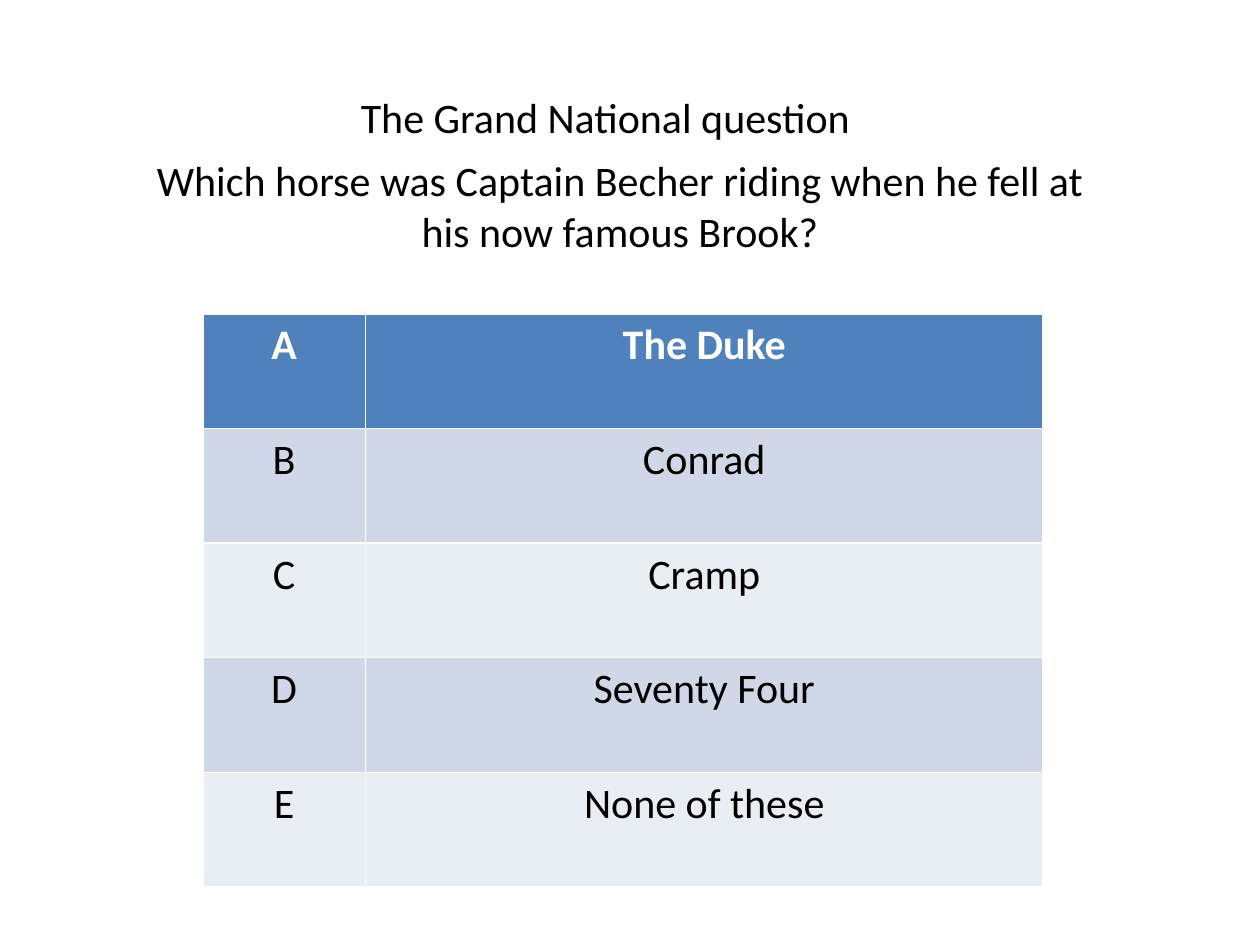
from pptx import Presentation
from pptx import util as u
from pptx.dml.color import RGBColor
from pptx.enum import text

COLORS = {
    "header": "4F81BD",
    "band_dark": "D0D8E8",
    "band_light": "E9EDF4",
    "white": "FFFFFF",
    "black": "000000",
}
FONT = "Calibri"
FONT_SIZE = 24
COLUMN_WIDTHS = (1.29, 5.38)
ROW_HEIGHT = 0.91

TITLE = "The Grand National question"
QUESTION = "Which horse was Captain Becher riding when he fell at his now famous Brook?"
ANSWERS = ("The Duke", "Conrad", "Cramp", "Seventy Four", "None of these")


def color(name):
    return RGBColor.from_string(COLORS[name])


def write(frame, words, color_name="black", bold=False):
    """Put one centred paragraph into a text frame."""
    frame.word_wrap = True
    paragraph = frame.paragraphs[0]
    paragraph.text = words
    paragraph.alignment = text.PP_ALIGN.CENTER
    font = paragraph.font
    font.name, font.size, font.bold = FONT, u.Pt(FONT_SIZE), bold
    font.color.rgb = color(color_name)


def add_title(slide, words, left, top, width, height):
    title = slide.shapes.title
    title.left, title.top = u.Inches(left), u.Inches(top)
    title.width, title.height = u.Inches(width), u.Inches(height)
    title.text_frame.vertical_anchor = text.MSO_ANCHOR.TOP
    title.text_frame.auto_size = text.MSO_AUTO_SIZE.NONE
    write(title.text_frame, words)


def add_question(slide, words, left, top, width, height):
    box = slide.shapes.add_textbox(*map(u.Inches, (left, top, width, height)))
    write(box.text_frame, words)


def add_answer_table(slide, answers, left, top):
    """One row per answer, lettered from A; the table style draws the white rules."""
    size = (sum(COLUMN_WIDTHS), ROW_HEIGHT * len(answers))
    table = slide.shapes.add_table(
        len(answers), len(COLUMN_WIDTHS), *map(u.Inches, (left, top, *size))
    ).table
    for column, width in zip(table.columns, COLUMN_WIDTHS):
        column.width = u.Inches(width)

    for index, (letter, answer) in enumerate(zip("ABCDE", answers)):
        table.rows[index].height = u.Inches(ROW_HEIGHT)
        is_header = index == 0
        band = "header" if is_header else ("band_light", "band_dark")[index % 2]
        for cell, words in zip(table.rows[index].cells, (letter, answer)):
            cell.fill.solid()
            cell.fill.fore_color.rgb = color(band)
            write(cell.text_frame, words, "white" if is_header else "black", is_header)


def main():
    presentation = Presentation()
    presentation.slide_width = u.Inches(10)
    presentation.slide_height = u.Inches(7.5)
    slide = presentation.slides.add_slide(presentation.slide_layouts[5])

    # Heading and question
    add_title(slide, TITLE, 2.64, 0.68, 4.33, 0.5)
    add_question(slide, QUESTION, 1.06, 1.18, 7.72, 0.91)

    # Possible answers
    add_answer_table(slide, ANSWERS, 1.61, 2.49)

    presentation.save("out.pptx")


if __name__ == "__main__":
    main()
